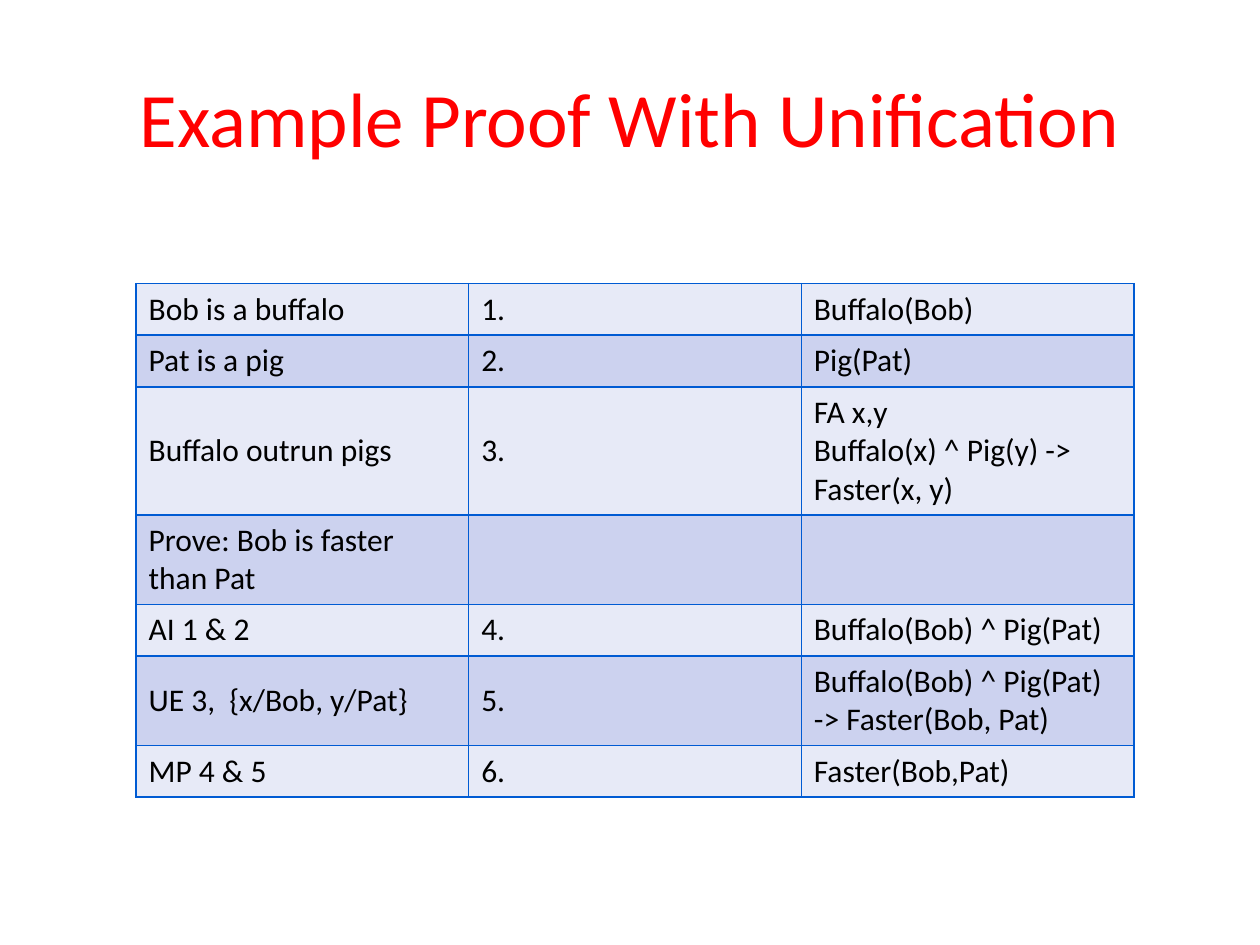
from lxml import etree
from pptx import Presentation
from pptx.dml.color import RGBColor
from pptx.enum.text import MSO_ANCHOR, PP_ALIGN
from pptx.oxml.ns import qn
from pptx.util import Inches, Pt

MIDDLE, CENTER = MSO_ANCHOR.MIDDLE, PP_ALIGN.CENTER

# Content: step, number, sentence in logic
TITLE = "Example Proof With Unification"
PROOF = [
    ("Bob is a buffalo", "1.", "Buffalo(Bob)"),
    ("Pat is a pig", "2.", "Pig(Pat)"),
    ("Buffalo outrun pigs", "3.", "FA x,y\vBuffalo(x) ^ Pig(y) -> Faster(x, y)"),
    ("Prove: Bob is faster than Pat", "", ""),
    ("AI 1 & 2", "4.", "Buffalo(Bob) ^ Pig(Pat)"),
    ("UE 3,  {x/Bob, y/Pat}", "5.", "Buffalo(Bob) ^ Pig(Pat) -> Faster(Bob, Pat)"),
    ("MP 4 & 5", "6.", "Faster(Bob,Pat)"),
]

# Style and layout
COLORS = {"title": "FF0000", "text": "000000", "border": "005BD3",
          "odd": "E7EAF7", "even": "CCD2EF"}
TITLE_FONT = {"name": "Calibri", "size": Pt(44)}
CELL_FONT = {"name": "Calibri", "size": Pt(18)}
COL_W, ROW_H = 2.64, 0.41
LEFT, TOP = 1.08, 2.25


def color(name):
    return RGBColor.from_string(COLORS[name])


def write(tf, text, font, color_name):
    p = tf.paragraphs[0]
    p.text = text
    for r in p.runs:
        for key, value in font.items():
            setattr(r.font, key, value)
        r.font.color.rgb = color(color_name)
    return p


def add_borders(cell):
    tcPr = cell._tc.get_or_add_tcPr()
    for i, side in enumerate(("lnL", "lnR", "lnT", "lnB")):
        ln = etree.Element(qn(f"a:{side}"), w=str(Pt(1)))
        fill = etree.SubElement(ln, qn("a:solidFill"))
        etree.SubElement(fill, qn("a:srgbClr"), val=COLORS["border"])
        tcPr.insert(i, ln)  # borders come before the fill


prs = Presentation()
prs.slide_width, prs.slide_height = Inches(10), Inches(7.5)
s = prs.slides.add_slide(prs.slide_layouts[5])

# Title
title = s.shapes.title
title.left, title.top, title.width, title.height = map(Inches, (0.5, 0.3, 9, 1.25))
title.text_frame.vertical_anchor = MIDDLE
write(title.text_frame, TITLE, TITLE_FONT, "title").alignment = CENTER

# Proof table
n_rows, n_cols = len(PROOF), len(PROOF[0])
table = s.shapes.add_table(n_rows, n_cols, Inches(LEFT), Inches(TOP),
                           Inches(COL_W * n_cols), Inches(ROW_H * n_rows)).table
table.first_row = False
for col in table.columns:
    col.width = Inches(COL_W)
for i, step in enumerate(PROOF):
    table.rows[i].height = Inches(ROW_H)
    for j, text in enumerate(step):
        cell = table.cell(i, j)
        cell.vertical_anchor = MIDDLE
        cell.fill.solid()
        cell.fill.fore_color.rgb = color("even" if i % 2 else "odd")
        add_borders(cell)
        write(cell.text_frame, text, CELL_FONT, "text")

prs.save("out.pptx")
